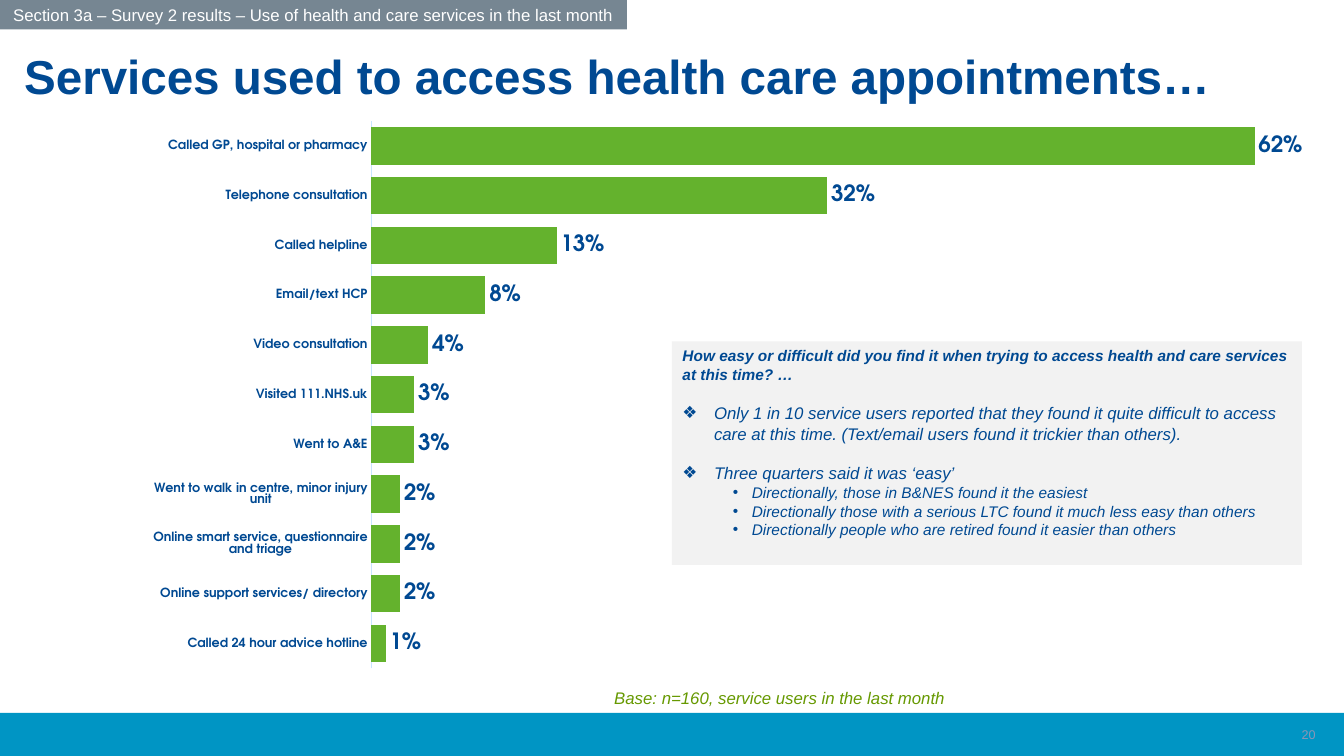
import pptx
import pptx.util
import pptx.chart.data
import pptx.dml.color
import pptx.enum.chart
import pptx.enum.shapes
import pptx.enum.text
import lxml.etree

PX = 9525
SANS, ROUND = "Arial", "TeX Gyre Adventor"
HUES = {"navy": "004992", "green": "64B22D", "olive": "669900", "band": "0095C4",
        "slate": "768692", "pale": "F2F2F2", "white": "FFFFFF", "mist": "8C95B6",
        "axis": "C8E4FF"}
ALIGN = pptx.enum.text.PP_ALIGN
ANCHOR = pptx.enum.text.MSO_ANCHOR

USAGE = [
    ("Called 24 hour advice hotline", 0.01),
    ("Online support services/ directory", 0.02),
    ("Online smart service, questionnaire and triage", 0.02),
    ("Went to walk in centre, minor injury unit", 0.02),
    ("Went to A&E", 0.03),
    ("Visited 111.NHS.uk", 0.03),
    ("Video consultation", 0.04),
    ("Email/text HCP", 0.08),
    ("Called helpline", 0.13),
    ("Telephone consultation", 0.32),
    ("Called GP, hospital or pharmacy", 0.62),
]
QUERY = ("How easy or difficult did you find it when trying to access health "
         "and care services at this time? …")
LEAD = {"bullet": "❖", "indent": 30, "hang": 30, "size": 12, "before": 14}
SUB = {"bullet": "•", "indent": 66, "hang": 18, "size": 11, "level": 1}
POINTS = [
    ("Only 1 in 10 service users reported that they found it quite difficult to access "
     "care at this time. (Text/email users found it trickier than others).", LEAD),
    ("Three quarters said it was ‘easy’", LEAD),
    ("Directionally, those in B&NES found it the easiest", SUB),
    ("Directionally those with a serious LTC found it much less easy than others", SUB),
    ("Directionally people who are retired found it easier than others", SUB),
]


def hue(name):
    """Return the named colour."""
    return pptx.dml.color.RGBColor.from_string(HUES[name])


def scale(*sides):
    """Turn px lengths into EMU."""
    return [pptx.util.Emu(side * PX) for side in sides]


def style(font, size, color, face=SANS, bold=False, italic=False):
    """Set the look of a font."""
    font.size, font.name = pptx.util.Pt(size), face
    font.bold, font.italic = bold, italic
    font.color.rgb = hue(color)


def write(frame, text, align=ALIGN.LEFT, level=0, before=0, lines=1.0,
          bullet=None, indent=0, hang=0, **look):
    """Add one formatted paragraph to a text frame."""
    para = frame.paragraphs[0] if not frame.text else frame.add_paragraph()
    para.alignment, para.level = align, level
    para.line_spacing, para.space_before = lines, pptx.util.Pt(before)
    props = para._p.get_or_add_pPr()
    props.set("marL", str(indent * PX))
    props.set("indent", str(-hang * PX))
    tag = pptx.oxml.ns.qn("a:buChar" if bullet else "a:buNone")
    mark = lxml.etree.SubElement(props, tag)
    if bullet:
        mark.set("char", bullet)
    run = para.add_run()
    run.text = text
    style(run.font, **look)


def place(shape, box, anchor=ANCHOR.TOP, inset=(10, 5)):
    """Move a shape and ready its text frame."""
    shape.left, shape.top, shape.width, shape.height = scale(*box)
    frame = shape.text_frame
    frame.word_wrap, frame.vertical_anchor = True, anchor
    frame.auto_size = pptx.enum.text.MSO_AUTO_SIZE.NONE
    frame.margin_left = frame.margin_right = scale(inset[0])[0]
    frame.margin_top = frame.margin_bottom = scale(inset[1])[0]
    return frame


def paint(shape, color):
    """Give a shape a flat fill."""
    shape.fill.solid()
    shape.fill.fore_color.rgb = hue(color)


def block(slide, box, color):
    """Draw a filled bar and return its text frame."""
    kind = pptx.enum.shapes.MSO_SHAPE.RECTANGLE
    shape = slide.shapes.add_shape(kind, *scale(*box))
    shape.shadow.inherit = False
    paint(shape, color)
    shape.line.fill.background()
    return place(shape, box, ANCHOR.MIDDLE)


def label(slide, box, anchor=ANCHOR.TOP):
    """Add a text box and return its frame."""
    return place(slide.shapes.add_textbox(*scale(*box)), box, anchor)


def fix_plot(chart, **sides):
    """Pin the inner plot area to fractions of the chart."""
    area = chart._chartSpace.chart.plotArea
    for old in area.findall(pptx.oxml.ns.qn("c:layout")):
        area.remove(old)
    layout = lxml.etree.Element(pptx.oxml.ns.qn("c:layout"))
    manual = lxml.etree.SubElement(layout, pptx.oxml.ns.qn("c:manualLayout"))
    parts = {"layoutTarget": "inner", "xMode": "edge", "yMode": "edge", **sides}
    for name, value in parts.items():
        node = lxml.etree.SubElement(manual, pptx.oxml.ns.qn("c:" + name))
        node.set("val", str(value))
    area.insert(0, layout)


def bars(slide, box):
    """Chart the share of people using each service."""
    enums = pptx.enum.chart
    data = pptx.chart.data.CategoryChartData(number_format="0%")
    data.categories = [name for name, share in USAGE]
    data.add_series("Series 1", [share for name, share in USAGE])
    frame = slide.shapes.add_chart(enums.XL_CHART_TYPE.BAR_CLUSTERED, *scale(*box), data)
    slide.shapes._spTree.insert(2, frame._element)
    chart = frame.chart
    chart.has_legend = chart.has_title = False
    style(chart.font, 10, "navy")
    fix_plot(chart, x=0.18, y=0.015, w=0.796, h=0.946)

    plot = chart.plots[0]
    plot.gap_width, plot.vary_by_categories = 33, False
    paint(plot.series[0].format, "green")
    plot.has_data_labels = True
    tags = plot.data_labels
    tags.show_value, tags.number_format = True, "0%"
    tags.number_format_is_linked = False
    tags.position = enums.XL_LABEL_POSITION.OUTSIDE_END
    style(tags.font, 16, "navy", ROUND, bold=True)

    names, shares = chart.category_axis, chart.value_axis
    names.major_tick_mark = enums.XL_TICK_MARK.NONE
    names.has_major_gridlines = shares.has_major_gridlines = False
    names.format.line.color.rgb = hue("axis")
    names.format.line.width = pptx.util.Pt(0.75)
    style(names.tick_labels.font, 9, "navy", ROUND, bold=True)
    shares.minimum_scale, shares.maximum_scale = 0, 0.7
    shares.visible = False


def main():
    """Build the slide and save it."""
    deck = pptx.Presentation()
    deck.slide_width, deck.slide_height = scale(1280, 720)
    slide = deck.slides.add_slide(deck.slide_layouts[1])
    title, panel = slide.placeholders

    block(slide, (0, 679, 1280, 41), "band")
    bars(slide, (139, 107, 1193, 551))
    write(label(slide, (975, 680, 288, 38), ANCHOR.MIDDLE), "20",
          align=ALIGN.RIGHT, size=9, color="mist")
    write(place(title, (0, 34, 1209, 99), inset=(23, 5)),
          "Services used to access health care appointments…",
          lines=1.1, size=34, color="navy", bold=True)
    write(label(slide, (575, 650, 337, 29)), "Base: n=160, service users in the last month",
          size=12, color="olive", italic=True)
    write(block(slide, (0, 0, 597, 28), "slate"),
          "Section 3a – Survey 2 results – Use of health and care services in the last month",
          align=ALIGN.CENTER, size=12, color="white")

    paint(panel, "pale")
    frame = place(panel, (640, 325, 600, 213))
    write(frame, QUERY, size=11, color="navy", bold=True, italic=True)
    for text, form in POINTS:
        write(frame, text, color="navy", italic=True, **form)
    deck.save("out.pptx")


if __name__ == "__main__":
    main()
